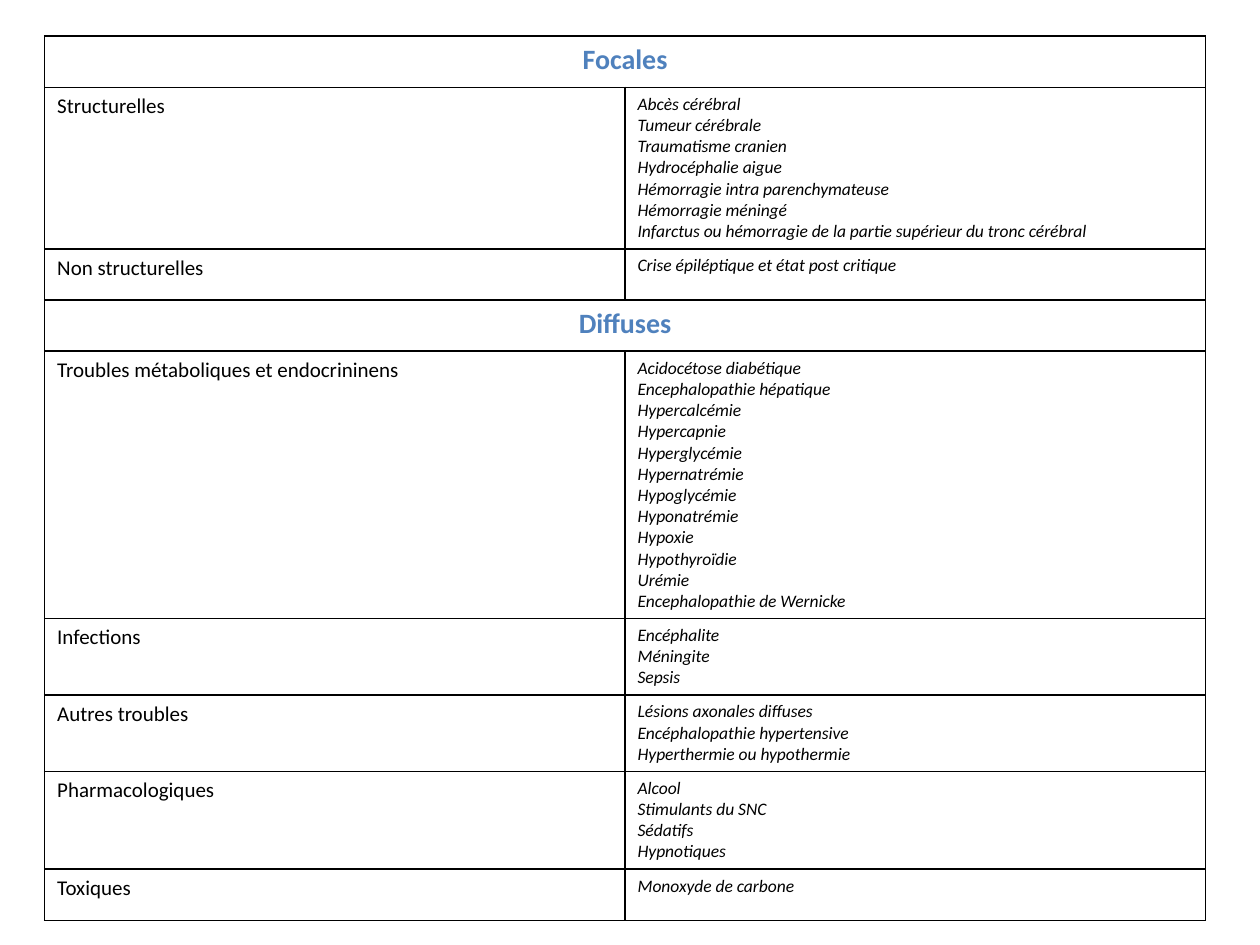
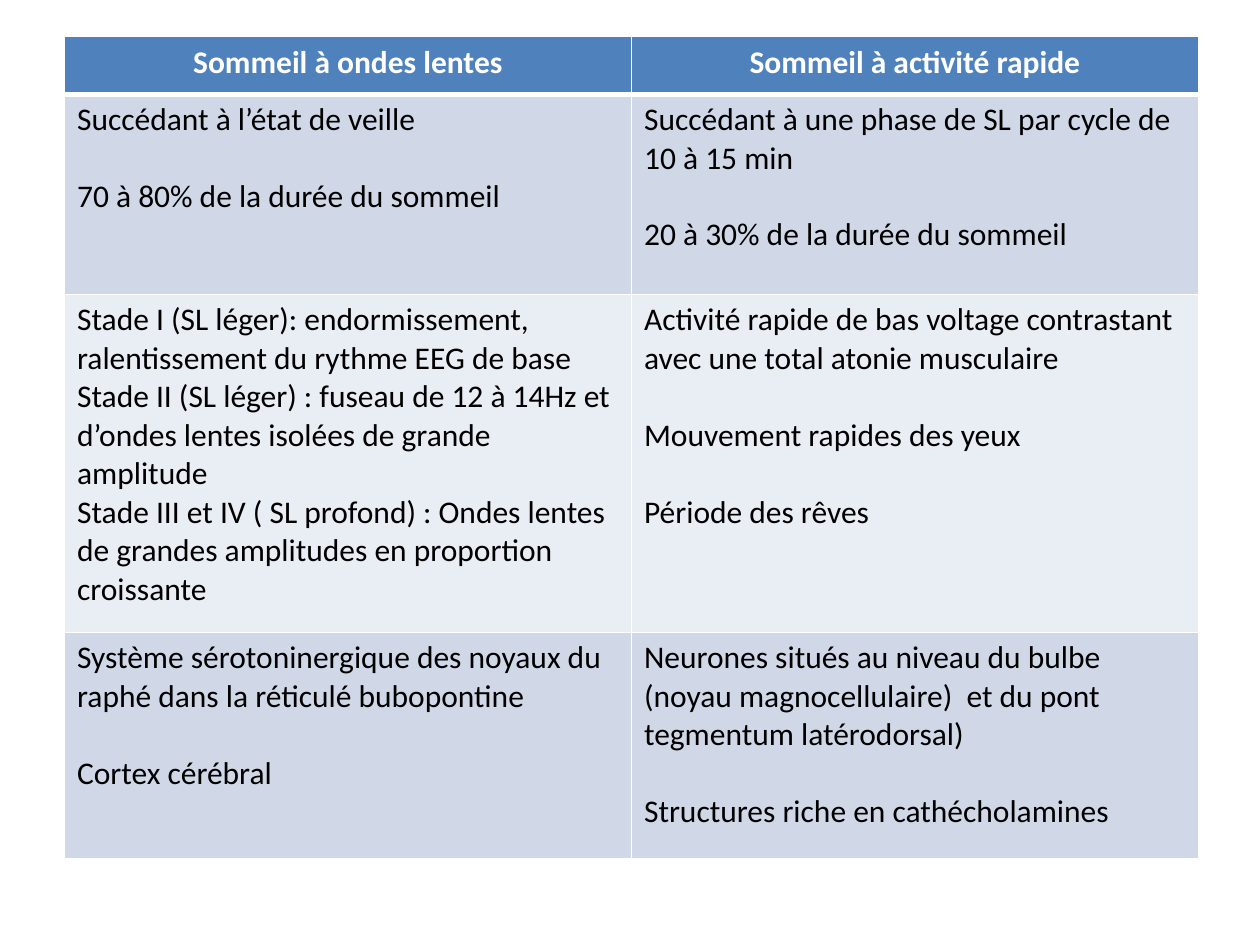
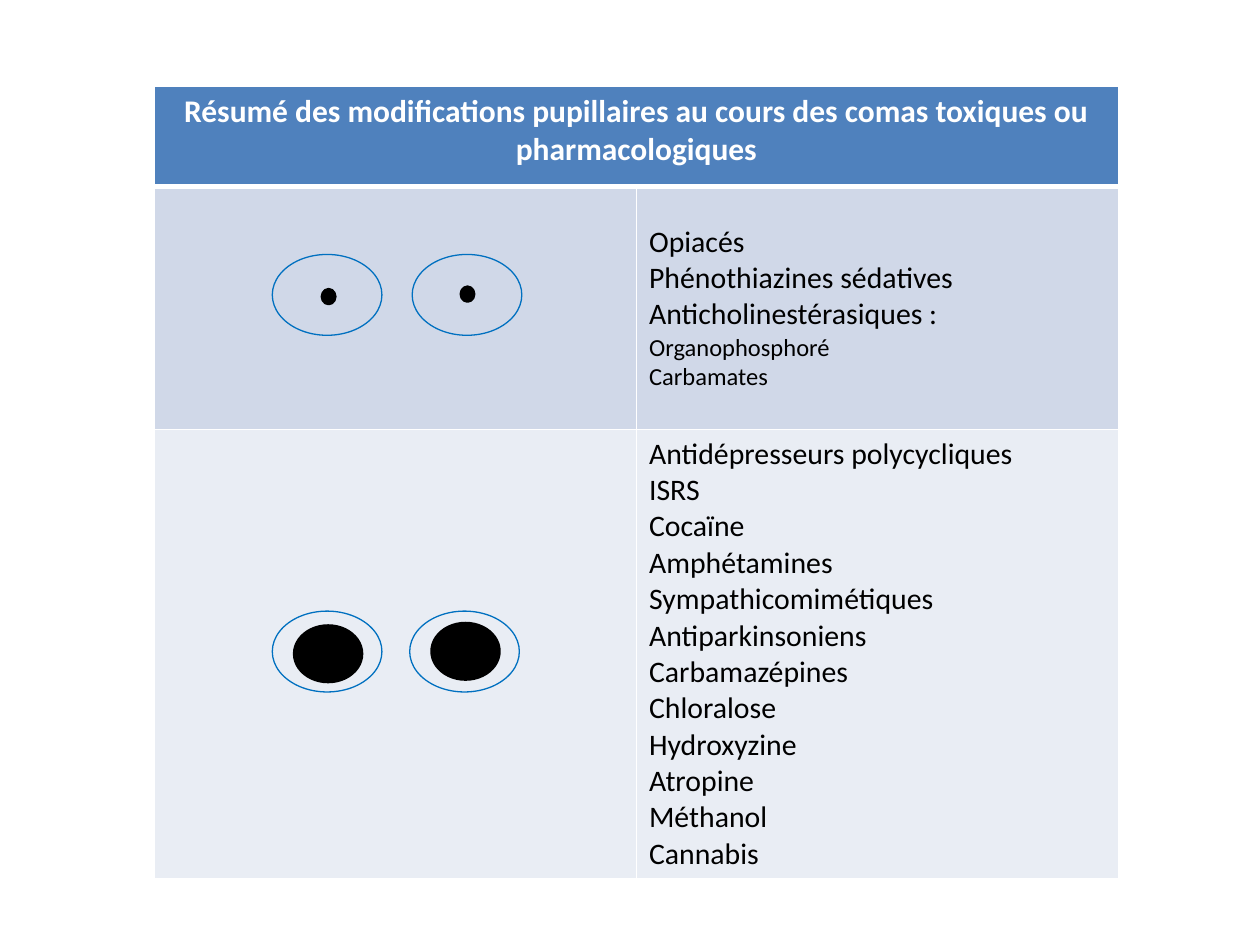
"""Build three slides of tables on coma causes, sleep and pupils."""
from pptx import Presentation
from pptx.dml.color import RGBColor
from pptx.enum.shapes import MSO_SHAPE
from pptx.enum.text import MSO_ANCHOR, PP_ALIGN
from pptx.oxml import parse_xml
from pptx.oxml.ns import nsdecls
from pptx.util import Cm, Pt

BLACK = RGBColor(0, 0, 0)
WHITE = RGBColor(0xFF, 0xFF, 0xFF)
BLUE = RGBColor(0x4F, 0x81, 0xBD)
BANDS = (RGBColor(0xD0, 0xD8, 0xE8), RGBColor(0xE9, 0xED, 0xF4))
IRIS = RGBColor(0x00, 0x70, 0xC0)

CAUSES = [
    ("Focales",),
    ("Structurelles",
     "Abcès cérébral\nTumeur cérébrale\nTraumatisme cranien\n"
     "Hydrocéphalie aigue\nHémorragie intra parenchymateuse\n"
     "Hémorragie méningé\n"
     "Infarctus ou hémorragie de la partie supérieur du tronc cérébral"),
    ("Non structurelles", "Crise épiléptique et état post critique"),
    ("Diffuses",),
    ("Troubles métaboliques et endocrininens",
     "Acidocétose diabétique\nEncephalopathie hépatique\nHypercalcémie\n"
     "Hypercapnie\nHyperglycémie\nHypernatrémie\nHypoglycémie\n"
     "Hyponatrémie\nHypoxie\nHypothyroïdie\nUrémie\n"
     "Encephalopathie de Wernicke"),
    ("Infections", "Encéphalite\nMéningite\nSepsis"),
    ("Autres troubles",
     "Lésions axonales diffuses\nEncéphalopathie hypertensive\n"
     "Hyperthermie ou hypothermie"),
    ("Pharmacologiques", "Alcool\nStimulants du SNC\nSédatifs\nHypnotiques"),
    ("Toxiques", "Monoxyde de carbone"),
]
SLEEP = [
    ("Sommeil à ondes lentes", "Sommeil à activité rapide"),
    ("Succédant à l’état de veille\n\n70 à 80% de la durée du sommeil",
     "Succédant à une phase de SL par cycle de 10 à 15 min\n\n"
     "20 à 30% de la durée du sommeil"),
    ("Stade I (SL léger): endormissement, ralentissement du rythme EEG "
     "de base\n"
     "Stade II (SL léger) : fuseau de 12 à 14Hz et d’ondes lentes isolées "
     "de grande amplitude\n"
     "Stade III et IV ( SL profond) : Ondes lentes de grandes amplitudes "
     "en proportion croissante",
     "Activité rapide de bas voltage contrastant avec une total atonie "
     "musculaire\n\nMouvement rapides des yeux\n\nPériode des rêves"),
    ("Système sérotoninergique des noyaux du raphé dans la réticulé "
     "bubopontine\n\nCortex cérébral",
     "Neurones situés au niveau du bulbe (noyau magnocellulaire)  et du "
     "pont tegmentum latérodorsal)\n\nStructures riche en cathécholamines"),
]
PUPILS = [
    ("Résumé des modifications pupillaires au cours des comas toxiques ou "
     "pharmacologiques",),
    ("", "Opiacés\nPhénothiazines sédatives\nAnticholinestérasiques :\n"
         "Organophosphoré\nCarbamates"),
    ("", "Antidépresseurs polycycliques\nISRS\nCocaïne\nAmphétamines\n"
         "Sympathicomimétiques\nAntiparkinsoniens\nCarbamazépines\n"
         "Chloralose\nHydroxyzine\nAtropine\nMéthanol\nCannabis"),
]


class Deck:
    """Holds the shared style and the current slide."""

    font = "Calibri"
    leading = 1.22

    def __init__(self):
        """Start an empty 4:3 deck."""
        self.prs = Presentation()
        self.prs.slide_width, self.prs.slide_height = Cm(25.4), Cm(19.05)

    def page(self):
        """Add a blank slide."""
        self.slide = self.prs.slides.add_slide(self.prs.slide_layouts[6])

    def grid(self, left, top, width, heights, rows):
        """Add a two-column table, one-item rows spanning both columns."""
        frame = self.slide.shapes.add_table(
            len(rows), 2, Cm(left), Cm(top), Cm(2 * width), Cm(sum(heights)))
        table = frame.table
        table.horz_banding = False
        table.first_row = False
        for col in table.columns:
            col.width = Cm(width)
        for row, height, texts in zip(table.rows, heights, rows):
            row.height = Cm(height)
            if len(texts) == 1:
                row.cells[0].merge(row.cells[1])
        return table

    def label(self, cell, text, size, color=BLACK, bold=False, italic=False,
              align=PP_ALIGN.LEFT):
        """Fill a cell; a double line break leaves a one-line gap."""
        blocks = [block.split("\n") for block in text.split("\n\n")]
        frame = cell.text_frame
        frame.text = "\n".join(line for block in blocks for line in block)
        starts, count = set(), 0
        for block in blocks[:-1]:
            count += len(block)
            starts.add(count)
        for num, para in enumerate(frame.paragraphs):
            para.alignment = align
            if num in starts:
                para.space_before = Pt(round(size * self.leading))
            para.font.size = Pt(size)
            for run in para.runs:
                font = run.font
                font.name, font.size = self.font, Pt(size)
                font.bold, font.italic = bold, italic
                font.color.rgb = color

    def edge(self, cell, color, top=1, bottom=1):
        """Draw the four borders of a cell."""
        props = cell._tc.get_or_add_tcPr()
        sides = (("L", 1), ("R", 1), ("T", top), ("B", bottom))
        for num, (side, width) in enumerate(sides):
            props.insert(num, parse_xml(
                f'<a:ln{side} {nsdecls("a")} w="{Pt(width)}"><a:solidFill>'
                f'<a:srgbClr val="{color}"/></a:solidFill></a:ln{side}>'))

    def plain(self, left, top, width, heights, rows):
        """Add an outlined table with blue banner rows."""
        table = self.grid(left, top, width, heights, rows)
        for row, texts in zip(table.rows, rows):
            for cell in row.cells:
                cell.fill.background()
                self.edge(cell, BLACK)
            head, body = row.cells
            if len(texts) == 1:
                self.label(head, texts[0], 16, BLUE, True,
                           align=PP_ALIGN.CENTER)
            else:
                self.label(head, texts[0], 12)
                self.label(body, texts[1], 10, italic=True)

    def banded(self, left, top, width, heights, rows, size,
               anchor=MSO_ANCHOR.TOP):
        """Add a table with a blue header and tinted rows."""
        table = self.grid(left, top, width, heights, rows)
        for num, row in enumerate(table.rows):
            for cell in row.cells:
                cell.fill.solid()
                cell.fill.fore_color.rgb = BANDS[(num - 1) % 2] if num else BLUE
                self.edge(cell, WHITE, 3 if num == 1 else 1, 1 if num else 3)
            for cell, text in zip(row.cells, rows[num]):
                if num:
                    cell.vertical_anchor = anchor
                    self.label(cell, text, size)
                else:
                    self.label(cell, text, 18, WHITE, True,
                               align=PP_ALIGN.CENTER)
        return table

    def oval(self, group, spot, size, color, weight, solid):
        """Add a round shape to a group."""
        shape = group.shapes.add_shape(
            MSO_SHAPE.FLOWCHART_CONNECTOR, *map(Cm, spot + size))
        shape.shadow.inherit = False
        if solid:
            shape.fill.solid()
            shape.fill.fore_color.rgb = color
        else:
            shape.fill.background()
        shape.line.color.rgb = color
        shape.line.width = Pt(weight)

    def eyes(self, rims, dots, size):
        """Draw a pair of eyes with pupils of the given size."""
        group = self.slide.shapes.add_group_shape()
        for spot in dots:
            self.oval(group, spot, size, BLACK, 2, True)
        for spot in rims:
            self.oval(group, spot, (2.21, 1.63), IRIS, 0.75, False)


def main():
    """Build and save the slides."""
    deck = Deck()

    deck.page()
    deck.plain(0.9, 0.73, 11.7,
               (1.03, 3.26, 1.03, 1.03, 5.39, 1.54, 1.54, 1.97, 1.03), CAUSES)

    deck.page()
    deck.banded(1.3, 0.74, 11.43, (1.16, 4.04, 6.81, 4.57), SLEEP, 18)

    deck.page()
    table = deck.banded(3.1, 1.73, 9.73, (2.03, 4.9, 9.02), PUPILS, 17,
                        MSO_ANCHOR.MIDDLE)
    for para in table.cell(1, 1).text_frame.paragraphs[-2:]:
        para.runs[0].font.size = Pt(14)
    deck.eyes([(5.49, 5.13), (8.31, 5.13)],
              [(6.5, 5.84), (9.3, 5.79)], (0.25, 0.28))
    deck.eyes([(5.49, 12.32), (8.26, 12.32)],
              [(5.94, 12.62), (8.71, 12.57)], (1.35, 1.12))

    deck.prs.save("out.pptx")


if __name__ == "__main__":
    main()
